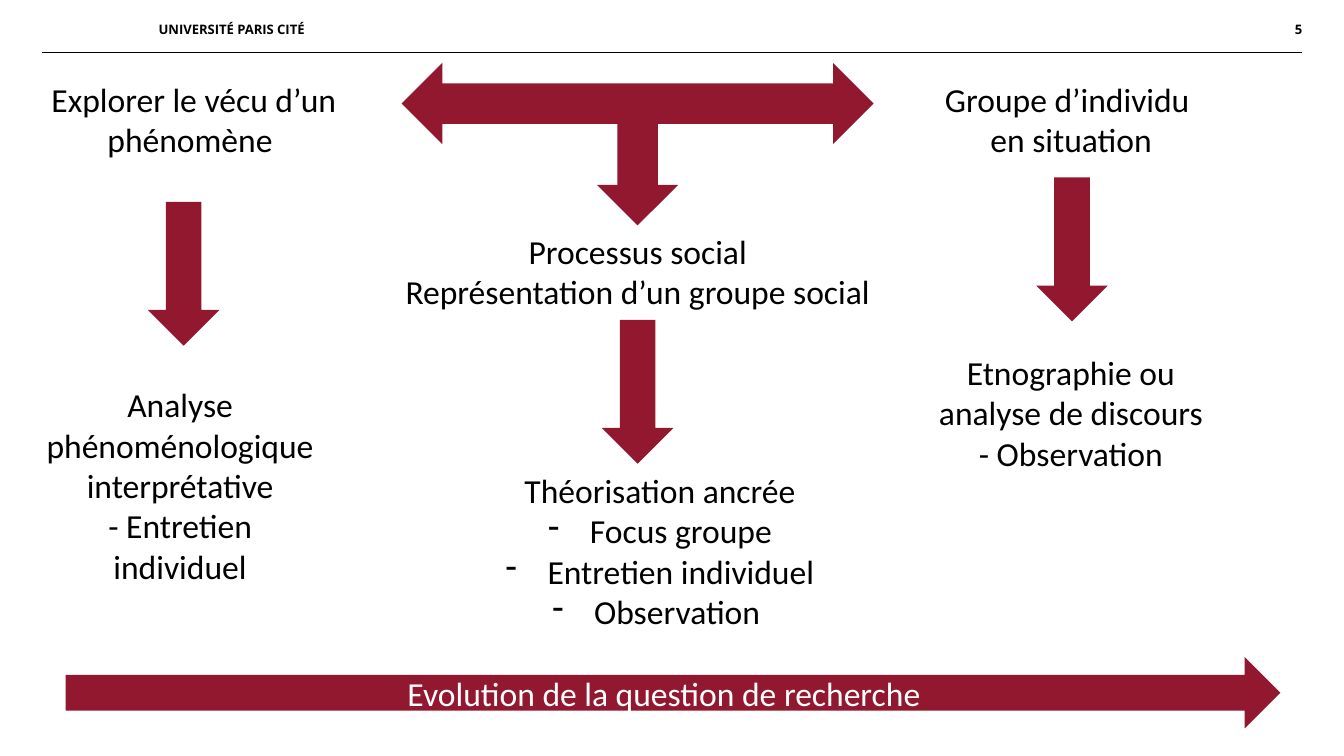
from dataclasses import dataclass

from lxml import etree
from pptx import Presentation
from pptx.dml.color import RGBColor
from pptx.enum.shapes import MSO_CONNECTOR, MSO_SHAPE
from pptx.enum.text import MSO_ANCHOR, MSO_AUTO_SIZE, PP_ALIGN
from pptx.oxml.ns import qn
from pptx.util import Cm, Pt

LEFT, CENTER, RIGHT = PP_ALIGN.LEFT, PP_ALIGN.CENTER, PP_ALIGN.RIGHT
MIDDLE = MSO_ANCHOR.MIDDLE
FIT_SHAPE = MSO_AUTO_SIZE.SHAPE_TO_FIT_TEXT
RIGHT_ARROW, THREE_WAY_ARROW = MSO_SHAPE.RIGHT_ARROW, MSO_SHAPE.LEFT_RIGHT_UP_ARROW
STRAIGHT = MSO_CONNECTOR.STRAIGHT


@dataclass(frozen=True)
class Theme:
    crimson: RGBColor = RGBColor(0x92, 0x18, 0x30)
    ink: RGBColor = RGBColor(0, 0, 0)
    white: RGBColor = RGBColor(255, 255, 255)
    header_font: str = "Open Sans"
    body_font: str = "Calibri"
    header_size: Pt = Pt(7)
    body_size: Pt = Pt(18)


theme = Theme()
deck = Presentation()
deck.slide_width, deck.slide_height = Cm(25.4), Cm(14.29)
slide = deck.slides.add_slide(deck.slide_layouts[6])


def write(frame, lines, color, align=CENTER, header=False, first_bullet=None):
    frame.word_wrap = True
    for index, line in enumerate(lines):
        paragraph = frame.paragraphs[0] if index == 0 else frame.add_paragraph()
        paragraph.text = line
        paragraph.alignment = align
        if first_bullet is not None and index >= first_bullet:
            properties = paragraph._p.get_or_add_pPr()
            properties.set("marL", str(Cm(0.79)))
            properties.set("indent", str(-Cm(0.79)))
            etree.SubElement(properties, qn("a:buChar")).set("char", "-")
        font = paragraph.font
        font.name = theme.header_font if header else theme.body_font
        font.size = theme.header_size if header else theme.body_size
        font.bold = header
        font.color.rgb = color


def add_arrow(kind, left, top, width, height, rotation=0):
    arrow = slide.shapes.add_shape(kind, Cm(left), Cm(top), Cm(width), Cm(height))
    arrow.rotation = rotation
    arrow.shadow.inherit = False
    arrow.fill.solid()
    arrow.fill.fore_color.rgb = theme.crimson
    arrow.line.fill.background()
    return arrow


header_rule = slide.shapes.add_connector(STRAIGHT, Cm(0.79), Cm(0.99), Cm(24.61), Cm(0.99))
header_rule.line.color.rgb = theme.ink
header_rule.line.width = Pt(0.25)
etree.SubElement(header_rule._element.spPr, qn("a:effectLst"))

for label, left, width, align in [
    ("5", 21.11, 3.5, RIGHT),
    ("UNIVERSITÉ PARIS CITÉ", 3, 4.8, LEFT),
]:
    frame = slide.shapes.add_textbox(Cm(left), Cm(0.25), Cm(width), Cm(0.6)).text_frame
    frame.margin_left = frame.margin_right = frame.margin_top = frame.margin_bottom = 0
    frame.vertical_anchor = MIDDLE
    write(frame, [label], theme.ink, align, header=True)

add_arrow(THREE_WAY_ARROW, 7.59, 1.19, 8.92, 3.07, 180)
for left, top in [(10.69, 6.73), (2.11, 4.5), (18.9, 4.04)]:
    add_arrow(RIGHT_ARROW, left, top, 2.72, 1.35, 90)

for lines, left, top, width, height, first_bullet in [
    (["Processus social", "Représentation d’un groupe social"], 7.09, 4.24, 9.93, 1.8, None),
    (["Explorer le vécu d’un phénomène "], 0.25, 1.37, 6.83, 1.8, None),
    (["Groupe d’individu ", "en situation"], 15.95, 1.37, 8.59, 1.8, None),
    (["Théorisation ancrée", "Focus groupe", "Entretien individuel", "Observation "],
     8.41, 8.76, 8.13, 3.33, 1),
    (["Analyse phénoménologique interprétative", "- Entretien individuel"],
     0.51, 7.14, 5.79, 4.11, None),
    (["Etnographie ou analyse de discours", "- Observation"], 16.99, 6.53, 6.5, 3.33, None),
]:
    frame = slide.shapes.add_textbox(Cm(left), Cm(top), Cm(width), Cm(height)).text_frame
    frame.auto_size = FIT_SHAPE
    write(frame, lines, theme.ink, first_bullet=first_bullet)

evolution = add_arrow(RIGHT_ARROW, 1.24, 12.42, 22.96, 1.35)
evolution.text_frame.vertical_anchor = MIDDLE
write(evolution.text_frame, ["Evolution de la question de recherche"], theme.white)

deck.save("out.pptx")
